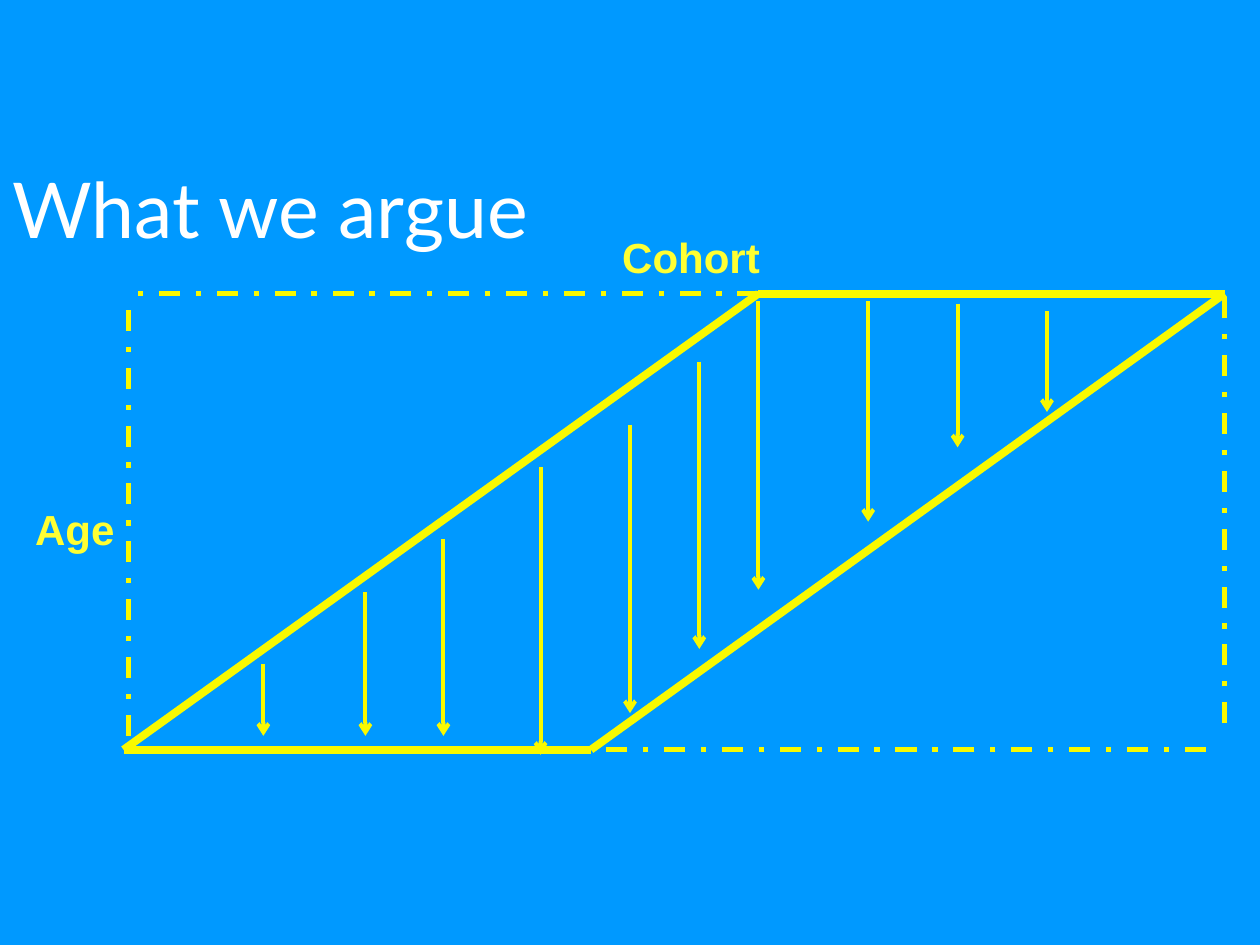
from lxml.etree import SubElement
from pptx import Presentation
from pptx.dml.color import RGBColor
from pptx.enum.dml import MSO_LINE
from pptx.enum.shapes import MSO_CONNECTOR
from pptx.enum.text import MSO_AUTO_SIZE
from pptx.oxml.ns import qn
from pptx.util import Pt

BLUE = RGBColor(0x00, 0x99, 0xFF)
WHITE = RGBColor(0xFF, 0xFF, 0xFF)
YELLOW = RGBColor(0xF9, 0xF9, 0x00)
LABEL_YELLOW = RGBColor(0xFF, 0xFF, 0x33)

LEFT, BOTTOM_CORNER, TOP_CORNER, RIGHT = 70.6, 337.7, 433.4, 699.8
TOP, BOTTOM = 167.8, 428.4

presentation = Presentation()
presentation.slide_width = Pt(720)
presentation.slide_height = Pt(540)
slide = presentation.slides.add_slide(presentation.slide_layouts[6])
slide.background.fill.solid()
slide.background.fill.fore_color.rgb = BLUE


def add_line(start_x, start_y, end_x, end_y, width):
    connector = slide.shapes.add_connector(
        MSO_CONNECTOR.STRAIGHT, Pt(start_x), Pt(start_y), Pt(end_x), Pt(end_y))
    connector.line.color.rgb = YELLOW
    connector.line.width = Pt(width)
    SubElement(connector._element.spPr, qn("a:effectLst"))
    return connector


def add_text(text, left, top, width, height, wrap, font_name, size, color, bold):
    text_box = slide.shapes.add_textbox(Pt(left), Pt(top), Pt(width), Pt(height))
    text_frame = text_box.text_frame
    text_frame.word_wrap = wrap
    text_frame.auto_size = MSO_AUTO_SIZE.SHAPE_TO_FIT_TEXT
    text_frame.text = text
    font = text_frame.paragraphs[0].runs[0].font
    font.name = font_name
    font.size = Pt(size)
    font.bold = bold
    font.color.rgb = color


add_text("What we argue", 0, 88.6, 720, 60.5, True, "Lato", 44, WHITE, False)

parallelogram_sides = [
    (TOP_CORNER, TOP, LEFT, BOTTOM),
    (RIGHT, TOP, BOTTOM_CORNER, BOTTOM),
    (LEFT, BOTTOM, BOTTOM_CORNER, BOTTOM),
    (TOP_CORNER, TOP, RIGHT, TOP),
]
for side in parallelogram_sides:
    add_line(*side, 4.5)

cohort_arrows = [
    (150.5, 379.4, 420.5),
    (208.8, 338.4, 420.5),
    (253.4, 308.2, 420.5),
    (308.9, 267.1, 431.3),
    (360, 242.6, 407.5),
    (399.6, 206.6, 370.8),
    (TOP_CORNER, 172.1, 337),
    (496.1, 172.1, 298.1),
    (547.2, 173.5, 255.6),
    (598.3, 177.8, 235.4),
]
for x, start_y, end_y in cohort_arrows:
    arrow = add_line(x, start_y, x, end_y, 2.25)
    SubElement(arrow.line._get_or_add_ln(), qn("a:tailEnd"), type="arrow")

dashed_edges = [
    (TOP_CORNER, TOP, LEFT, TOP),
    (689, BOTTOM, 326.2, BOTTOM),
    (73.4, 420.5, 73.4, 172.1),
    (RIGHT, 413.3, RIGHT, 164.9),
]
for edge in dashed_edges:
    add_line(*edge, 3).line.dash_style = MSO_LINE.DASH_DOT

for text, left, top, width in [("Age", 13, 284.4, 60.5), ("Cohort", 348.5, 128.9, 93.6)]:
    add_text(text, left, top, width, 36, False, "Arial", 24, LABEL_YELLOW, True)

presentation.save("out.pptx")
